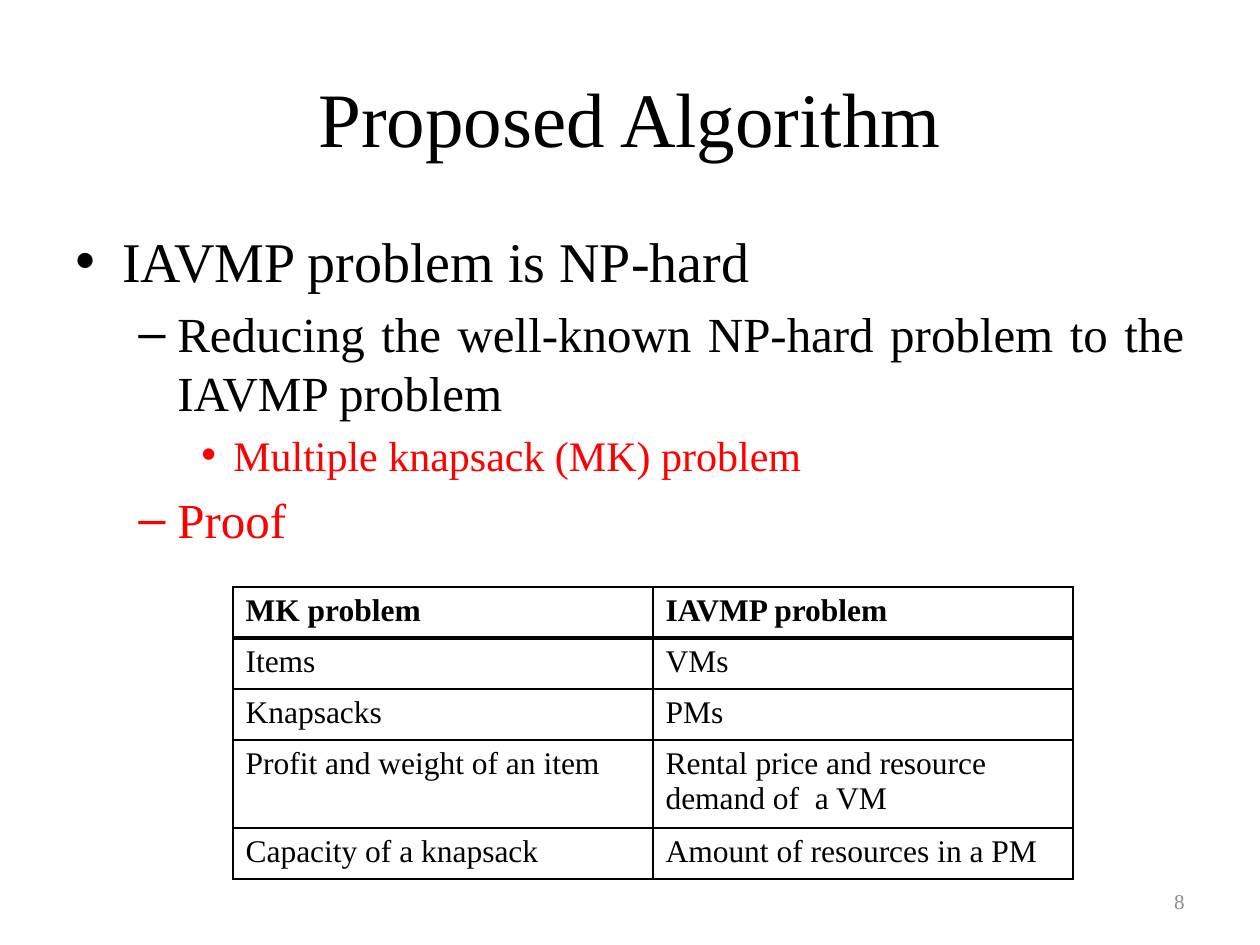
from lxml.etree import SubElement as Sub
from pptx import Presentation
from pptx.dml.color import RGBColor
from pptx.enum.text import MSO_ANCHOR as Anchor, PP_ALIGN as Align
from pptx.oxml import parse_xml
from pptx.oxml.ns import nsdecls, qn
from pptx.util import Emu, Pt

FONT = "Times New Roman"
BLACK, RED, GRAY = "000000", "FF0000", "8C8C8C"
LEVELS = [(32, 47, 47, "•"), (28, 102, 39, "–"), (24, 158, 32, "•")]
POINTS = [
    (0, "IAVMP problem is NP-hard", BLACK, Align.LEFT),
    (1, "Reducing the well-known NP-hard problem to the IAVMP problem", BLACK, Align.JUSTIFY),
    (2, "Multiple knapsack (MK) problem", RED, Align.JUSTIFY),
    (1, "Proof", RED, Align.JUSTIFY),
]
ROWS = [
    ("MK problem", "IAVMP problem"),
    ("Items", "VMs"),
    ("Knapsacks", "PMs"),
    ("Profit and weight of an item", "Rental price and resource demand of  a VM"),
    ("Capacity of a knapsack", "Amount of resources in a PM"),
]


def px(num):
    return Emu(round(num * 914400 / 126))


def color(code):
    return RGBColor.from_string(code)


def write(para, text, size=18, tint=BLACK, bold=False, align=Align.LEFT):
    para.alignment = align
    run = para.add_run()
    run.text = text
    font = run.font
    font.name, font.size, font.bold = FONT, Pt(size), bold
    font.color.rgb = color(tint)


class Deck:
    """Hold the style and the current slide."""

    def __init__(self):
        self.prs = Presentation()
        self.prs.slide_width, self.prs.slide_height = px(1260), px(945)
        self.slide = self.prs.slides.add_slide(self.prs.slide_layouts[5])

    def title(self, text, *box):
        shape = self.slide.shapes.title
        shape.left, shape.top, shape.width, shape.height = map(px, box)
        frame = shape.text_frame
        frame.vertical_anchor = Anchor.MIDDLE
        write(frame.paragraphs[0], text, size=44, align=Align.CENTER)

    def frame(self, *box, anchor=Anchor.TOP):
        frame = self.slide.shapes.add_textbox(*map(px, box)).text_frame
        frame.word_wrap = True
        frame.vertical_anchor = anchor
        return frame

    def label(self, text, *box, **style):
        frame = self.frame(*box, anchor=Anchor.MIDDLE)
        write(frame.paragraphs[0], text, **style)

    def bullets(self, points, *box):
        frame = self.frame(*box)
        for i, (level, text, tint, align) in enumerate(points):
            para = frame.add_paragraph() if i else frame.paragraphs[0]
            size, left, hang, mark = LEVELS[level]
            para.level = level
            para.space_before = Pt(size * 0.2)
            write(para, text, size=size, tint=tint, align=align)
            props = para._p.get_or_add_pPr()
            props.set("marL", str(px(left)))
            props.set("indent", str(-px(hang)))
            Sub(props, qn("a:buFont"), typeface="Arial")
            Sub(props, qn("a:buChar"), char=mark)

    def border(self, cell, **widths):
        props = cell._tc.get_or_add_tcPr()
        for i, side in enumerate("LRTB"):
            props.insert(i, parse_xml(
                f'<a:ln{side} {nsdecls("a")} w="{Pt(widths.get(side, 1))}">'
                f'<a:solidFill><a:srgbClr val="{BLACK}"/></a:solidFill></a:ln{side}>'))

    def table(self, rows, high, *box):
        shape = self.slide.shapes.add_table(len(rows), len(rows[0]), *map(px, box))
        grid = shape.table
        grid.first_row = grid.horz_banding = False
        for r, row in enumerate(rows):
            grid.rows[r].height = px(high[r])
            for c, text in enumerate(row):
                cell = grid.cell(r, c)
                cell.fill.background()
                write(cell.text_frame.paragraphs[0], text, bold=r == 0)
                self.border(cell, B=2 if r == 0 else 1, T=2 if r == 1 else 1)


def main():
    deck = Deck()
    deck.title("Proposed Algorithm", 63, 38, 1134, 158)
    deck.bullets(POINTS, 63, 220, 1134, 624)
    deck.label("8", 903, 876, 294, 50, size=12, tint=GRAY, align=Align.RIGHT)
    deck.table(ROWS, [51, 51, 51, 82, 51], 233, 587, 840, 286)
    deck.prs.save("out.pptx")


if __name__ == "__main__":
    main()
